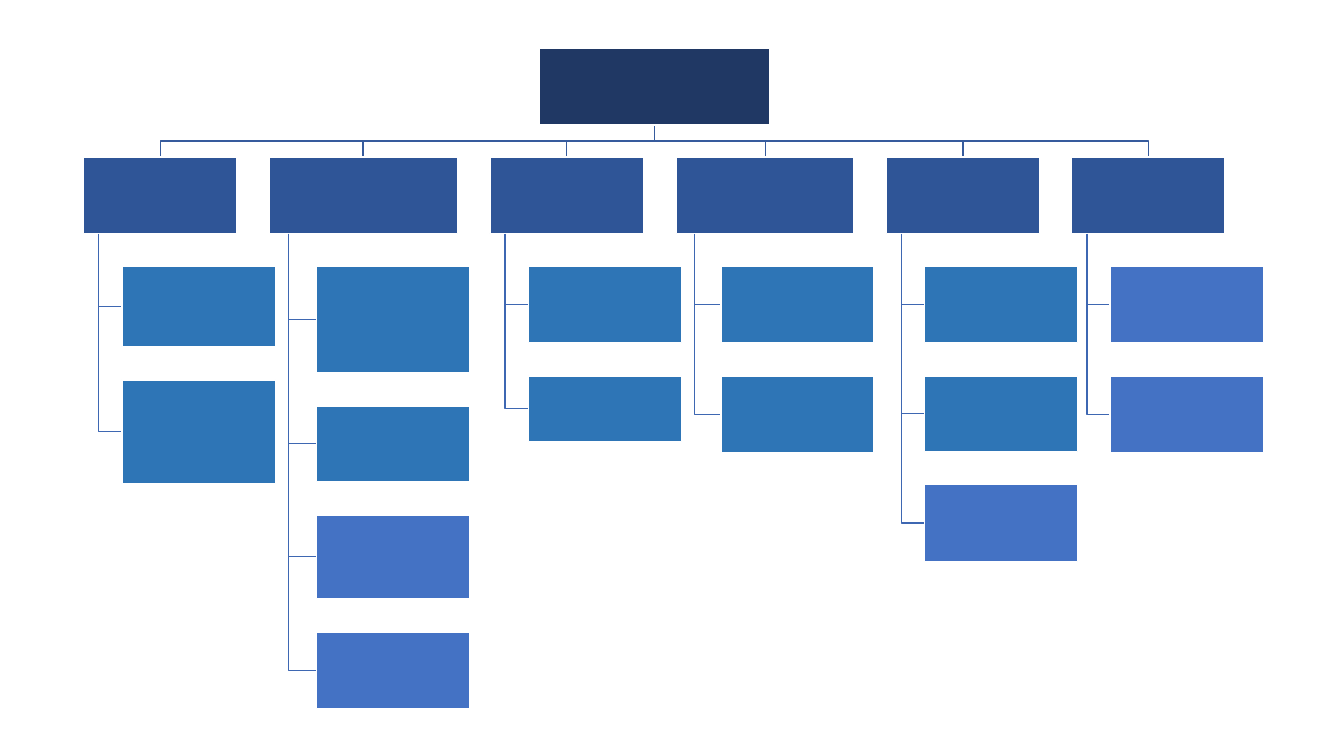
"""Draw a three-level organisation chart with six branches."""
from dataclasses import dataclass

from pptx import Presentation
from pptx.dml.color import RGBColor
from pptx.enum.shapes import MSO_SHAPE
from pptx.util import Pt


@dataclass(frozen=True)
class Theme:
    root: str = "203864"
    head: str = "2F5597"
    unit: str = "2E75B6"
    team: str = "4472C4"
    border: str = "FFFFFF"
    trunk: str = "365B9D"
    branch: str = "3E67B2"
    line_width: float = 1


THEME = Theme()
UNIT, TEAM = THEME.unit, THEME.team

BRANCHES = [
    {"left": 83, "width": 152, "children": [(80, UNIT), (103, UNIT)]},
    {"left": 267, "width": 187,
     "children": [(106, UNIT), (75, UNIT), (83, TEAM), (76, TEAM)]},
    {"left": 486, "width": 152, "children": [(76, UNIT), (65, UNIT)]},
    {"left": 671, "width": 176, "children": [(76, UNIT), (76, UNIT)]},
    {"left": 879, "width": 152,
     "children": [(76, UNIT), (75, UNIT), (76, TEAM)]},
    {"left": 1063, "width": 152, "children": [(76, TEAM), (76, TEAM)]},
]

PX = 9144
SLIDE_WIDTH, SLIDE_HEIGHT = 1333, 750
ROOT_LEFT, ROOT_TOP, ROOT_WIDTH = 535, 48, 228
BOX_HEIGHT, CHILD_WIDTH = 76, 152
LEVEL_GAP, CHILD_GAP = 32, 33


def add_box(page, left, top, width, height, color):
    box = page.shapes.add_shape(
        MSO_SHAPE.RECTANGLE, left * PX, top * PX, width * PX, height * PX)
    box.shadow.inherit = False
    box.fill.solid()
    box.fill.fore_color.rgb = RGBColor.from_string(color)
    box.line.color.rgb = RGBColor.from_string(THEME.border)
    box.line.width = Pt(THEME.line_width)


def add_path(page, points, color):
    builder = page.shapes.build_freeform(*points[0], scale=PX)
    builder.add_line_segments(points[1:], close=False)
    link = builder.convert_to_shape()
    link.shadow.inherit = False
    link.fill.background()
    link.line.color.rgb = RGBColor.from_string(color)
    link.line.width = Pt(THEME.line_width)


def add_branch(page, left, width, children):
    root_center = ROOT_LEFT + ROOT_WIDTH // 2
    root_bottom = ROOT_TOP + BOX_HEIGHT
    head_top = root_bottom + LEVEL_GAP
    head_bottom = head_top + BOX_HEIGHT
    head_center = left + width // 2
    bus = root_bottom + LEVEL_GAP // 2
    add_path(page, [(root_center, root_bottom), (root_center, bus),
                    (head_center, bus), (head_center, head_top)], THEME.trunk)
    add_box(page, left, head_top, width, BOX_HEIGHT, THEME.head)

    spine = left + round(width / 10)
    child_left = left + round(width / 4)
    top = head_bottom + LEVEL_GAP
    for height, color in children:
        middle = top + height // 2
        add_path(page, [(spine, head_bottom), (spine, middle),
                        (child_left, middle)], THEME.branch)
        add_box(page, child_left, top, CHILD_WIDTH, height, color)
        top += height + CHILD_GAP


def main():
    deck = Presentation()
    deck.slide_width, deck.slide_height = SLIDE_WIDTH * PX, SLIDE_HEIGHT * PX
    page = deck.slides.add_slide(deck.slide_layouts[6])
    for branch in BRANCHES:
        add_branch(page, **branch)
    add_box(page, ROOT_LEFT, ROOT_TOP, ROOT_WIDTH, BOX_HEIGHT, THEME.root)
    deck.save("out.pptx")


if __name__ == "__main__":
    main()
